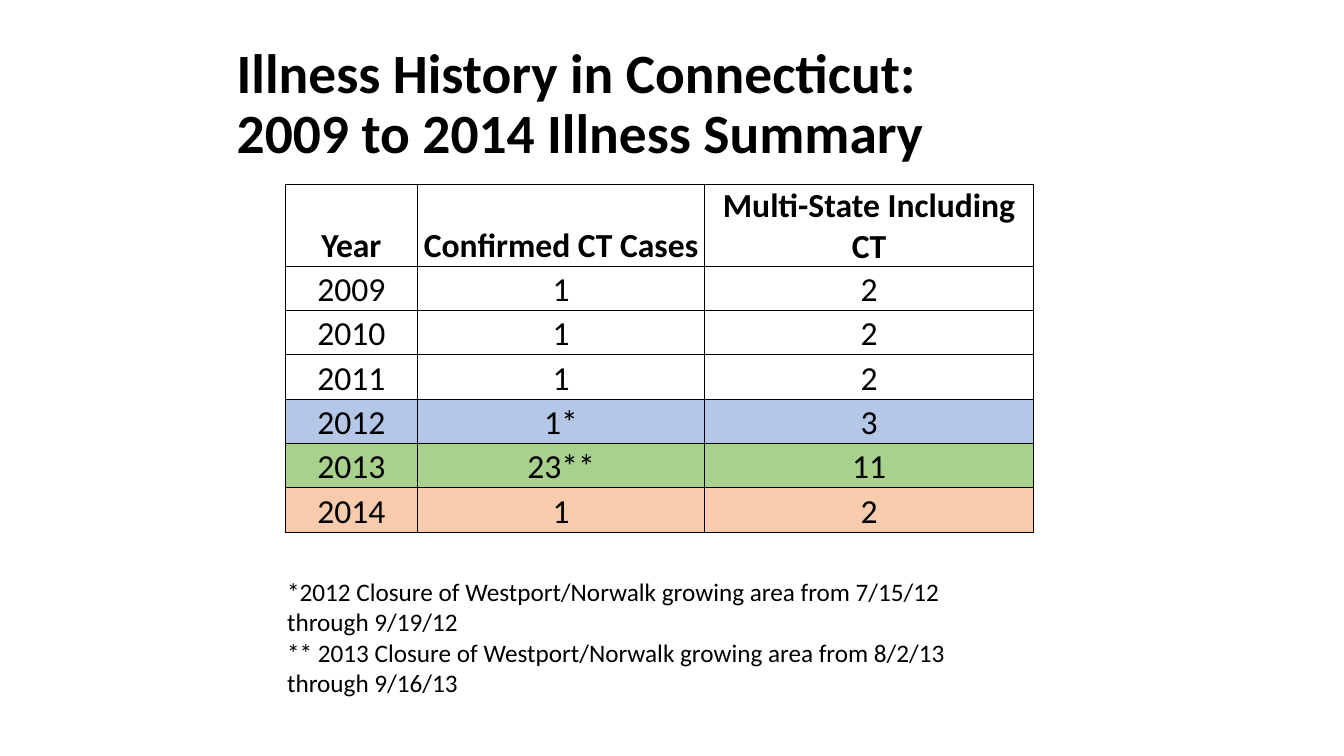
from lxml import etree
from pptx import Presentation
from pptx.dml.color import RGBColor
from pptx.enum.text import MSO_ANCHOR, PP_ALIGN
from pptx.oxml.ns import qn
from pptx.util import Inches, Pt

LEFT, CENTER = PP_ALIGN.LEFT, PP_ALIGN.CENTER
TOP, MIDDLE, BOTTOM = MSO_ANCHOR.TOP, MSO_ANCHOR.MIDDLE, MSO_ANCHOR.BOTTOM

THEME = {
    "font": "Calibri", "ink": "000000",
    "title": 39.6, "cell": 24, "note": 18, "rule": 1,
    "2012": "B4C7E7", "2013": "A9D18E", "2014": "F8CBAD",
}

TITLE = ["Illness History in Connecticut:\v2009 to 2014 Illness Summary"]
NOTES = [
    "*2012 Closure of Westport/Norwalk growing area from 7/15/12 through 9/19/12",
    "** 2013 Closure of Westport/Norwalk growing area from 8/2/13 through 9/16/13",
]
CASES = [
    ("Year", "Confirmed CT Cases", "Multi-State Including CT"),
    ("2009", "1", "2"),
    ("2010", "1", "2"),
    ("2011", "1", "2"),
    ("2012", "1*", "3"),
    ("2013", "23**", "11"),
    ("2014", "1", "2"),
]
COLS = [1.31, 2.85, 3.26]
HEAD, ROW = 0.7, 0.44


def write(frame, lines, size, bold=False, align=LEFT, space=1.0):
    frame.word_wrap = True
    frame.text = "\n".join(lines)
    look = {"name": THEME["font"], "size": Pt(size), "bold": bold}
    for para in frame.paragraphs:
        para.alignment, para.line_spacing = align, space
        for run in para.runs:
            for key, value in look.items():
                setattr(run.font, key, value)
            run.font.color.rgb = RGBColor.from_string(THEME["ink"])


def border(cell):
    """Rule all four sides of a cell; call before the cell is filled."""
    props = cell._tc.get_or_add_tcPr()
    for side in "LRTB":
        line = etree.SubElement(props, qn(f"a:ln{side}"), w=str(Pt(THEME["rule"])))
        fill = etree.SubElement(line, qn("a:solidFill"))
        etree.SubElement(fill, qn("a:srgbClr"), val=THEME["ink"])


deck = Presentation()
deck.slide_width, deck.slide_height = Inches(13.33), Inches(7.5)
slide = deck.slides.add_slide(deck.slide_layouts[6])

# Title and footnotes
for lines, place, size, bold, anchor, space in [
    (TITLE, (2.25, 0.42, 9, 1.25), THEME["title"], True, MIDDLE, 0.9),
    (NOTES, (2.75, 5.67, 7.47, 1.31), THEME["note"], False, TOP, 1.0),
]:
    box = slide.shapes.add_textbox(*map(Inches, place))
    box.text_frame.vertical_anchor = anchor
    write(box.text_frame, lines, size, bold, space=space)

# Table of cases by year
high = HEAD + ROW * (len(CASES) - 1)
place = map(Inches, (2.83, 1.83, sum(COLS), high))
table = slide.shapes.add_table(len(CASES), len(COLS), *place).table
table.horz_banding = False
for col, width in zip(table.columns, COLS):
    col.width = Inches(width)

inset = Inches(0.01)
format = {
    "margin_left": inset, "margin_right": inset, "margin_top": inset,
    "margin_bottom": 0, "vertical_anchor": BOTTOM,
}
for r, record in enumerate(CASES):
    table.rows[r].height = Inches(ROW if r else HEAD)
    tint = THEME.get(record[0])
    for c, text in enumerate(record):
        cell = table.cell(r, c)
        for key, value in format.items():
            setattr(cell, key, value)
        write(cell.text_frame, [text], THEME["cell"], r == 0, CENTER)
        border(cell)
        if tint:
            cell.fill.solid()
            cell.fill.fore_color.rgb = RGBColor.from_string(tint)
        else:
            cell.fill.background()

deck.save("out.pptx")
